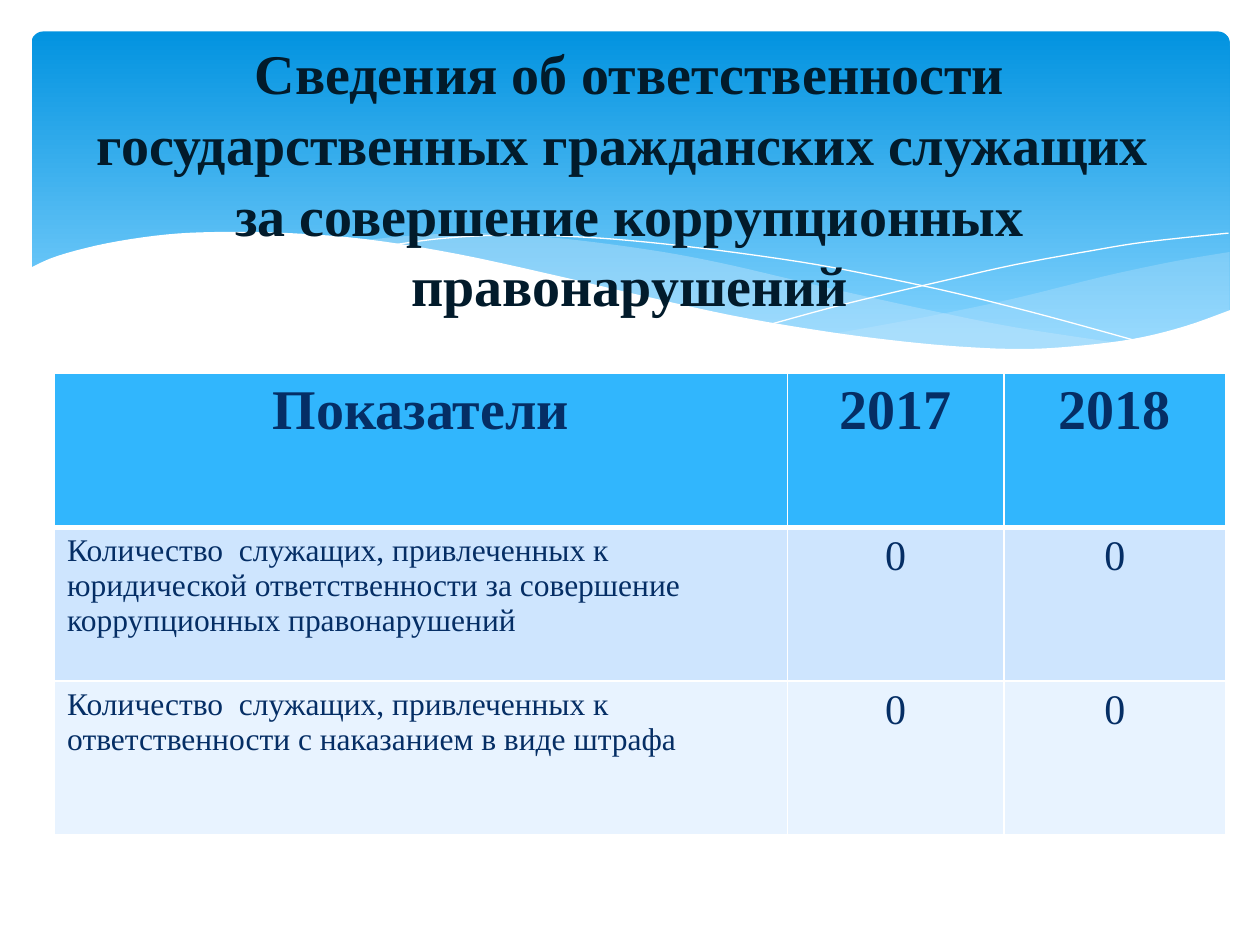
from dataclasses import dataclass
from itertools import product

from lxml import etree
from pptx import Presentation
from pptx import util as u
from pptx.dml.color import RGBColor
from pptx.enum import shapes, text
from pptx.oxml.ns import qn


@dataclass(frozen=True)
class Theme:
    font: str = "Times New Roman"
    sky_top: str = "0293E0"
    sky_bottom: str = "83D3FE"
    haze: str = "C6E7FC"
    white: str = "FFFFFF"
    title: str = "021B2B"
    ink: str = "052E65"
    header: str = "31B6FD"
    bands: tuple = ("CEE5FE", "E8F3FF")
    heading: int = 32
    value: int = 24
    body: int = 18


def smooth(knots, steps=5):
    ends = [knots[0], *knots, knots[-1]]
    points = [knots[0]]
    for a, b, c, d in zip(ends, ends[1:], ends[2:], ends[3:]):
        for i in range(1, steps + 1):
            t = i / steps
            points.append(tuple(
                0.5 * (2 * q + (r - p) * t + (2 * p - 5 * q + 4 * r - s) * t ** 2
                       + (3 * q - p - 3 * r + s) * t ** 3)
                for p, q, r, s in zip(a, b, c, d)))
    return points


class SlideBuilder:
    def __init__(self, slide, theme):
        self.s = slide
        self.theme = theme

    def label(self, p, content, size, color, bold=False, align=text.PP_ALIGN.CENTER):
        p.text = content
        p.alignment = align
        style = {"name": self.theme.font, "size": u.Pt(size), "bold": bold}
        for r in p.runs:
            for key, value in style.items():
                setattr(r.font, key, value)
            r.font.color.rgb = RGBColor.from_string(color)

    def sky(self, x, y, w, h):
        sp = self.s.shapes.add_shape(
            shapes.MSO_SHAPE.ROUNDED_RECTANGLE, *map(u.Pt, (x, y, w, h)))
        sp.adjustments[0] = 0.034
        sp.shadow.inherit = False
        sp.line.fill.background()
        sp.fill.gradient()
        sp.fill.gradient_angle = 270
        stops = ((0, self.theme.sky_top), (0.9, self.theme.sky_bottom))
        for stop, (position, color) in zip(sp.fill.gradient_stops, stops):
            stop.position = position
            stop.color.rgb = RGBColor.from_string(color)

    def outline(self, points, close):
        start, *rest = [(u.Pt(x), u.Pt(y)) for x, y in points]
        builder = self.s.shapes.build_freeform(*start)
        builder.add_line_segments(rest, close=close)
        sp = builder.convert_to_shape()
        sp.shadow.inherit = False
        return sp

    def area(self, points, color, opacity=100):
        sp = self.outline(points, True)
        sp.line.fill.background()
        sp.fill.solid()
        sp.fill.fore_color.rgb = RGBColor.from_string(color)
        if opacity < 100:
            clr = next(sp.element.spPr.iter(qn("a:srgbClr")))
            etree.SubElement(clr, qn("a:alpha"), val=str(opacity * 1000))

    def curve(self, points, color):
        sp = self.outline(points, False)
        sp.fill.background()
        sp.line.color.rgb = RGBColor.from_string(color)
        sp.line.width = u.Pt(0)

    def title(self, content, x, y, w, h):
        tf = self.s.shapes.add_textbox(*map(u.Pt, (x, y, w, h))).text_frame
        tf.word_wrap = True
        tf.vertical_anchor = text.MSO_ANCHOR.MIDDLE
        p = tf.paragraphs[0]
        self.label(p, content, self.theme.heading, self.theme.title, True)
        p.line_spacing = 1.05

    def borders(self, cell, widths):
        tc_pr = cell._tc.get_or_add_tcPr()
        for side, width in widths.items():
            ln = etree.SubElement(tc_pr, qn(f"a:ln{side}"), w=str(u.Pt(width)))
            fill = etree.SubElement(ln, qn("a:solidFill"))
            etree.SubElement(fill, qn("a:srgbClr"), val=self.theme.white)

    def table(self, rows, x, y, widths, row_height):
        th = self.theme
        frame = self.s.shapes.add_table(
            len(rows), len(widths),
            *map(u.Pt, (x, y, sum(widths), row_height * len(rows))))
        tbl = frame.table
        for column, width in zip(tbl.columns, widths):
            column.width = u.Pt(width)
        for row in tbl.rows:
            row.height = u.Pt(row_height)
        for i, j in product(range(len(rows)), range(len(widths))):
            cell = tbl.cell(i, j)
            self.borders(cell, {"L": 1, "R": 1, "T": 3 if i == 1 else 1,
                                "B": 3 if i == 0 else 1})
            cell.fill.solid()
            fill = th.bands[(i - 1) % 2] if i else th.header
            cell.fill.fore_color.rgb = RGBColor.from_string(fill)
            size = th.heading if i == 0 else th.value if j else th.body
            align = text.PP_ALIGN.LEFT if i and not j else text.PP_ALIGN.CENTER
            self.label(cell.text_frame.paragraphs[0], rows[i][j], size, th.ink, i == 0, align)


RIGHT_TOP = [(702.7, 144), (673, 149), (641.5, 155.5), (620, 160.6), (579.6, 170.6),
             (542, 178.6), (508.3, 185), (476, 190.8)]
RIGHT_BOTTOM = [(476, 190.8), (497.5, 193.7), (527, 197.3), (562.3, 199.6), (593.3, 199.6),
                (621.4, 198), (645.8, 194.4), (673.2, 188.6), (702.7, 177.8)]
MIDDLE_TOP = [(643, 196.6), (581, 187.2), (533.5, 177.8), (481, 166.3), (452.9, 159.8),
              (409.7, 149.8), (370, 142.6), (318.2, 136), (273.6, 133.2), (236.2, 134.6),
              (206, 137.5)]
MIDDLE_BOTTOM = [(206, 137.5), (246, 143.3), (291, 152), (323.3, 159.8), (381.6, 172.8),
                 (432.7, 183.6), (478.8, 191.5), (519.8, 197.3), (556.6, 199.4),
                 (589, 200.2), (617, 199.4), (643, 196.6)]
FALLING_LINE = [(222.5, 140.4), (247.7, 136.8), (278.6, 134.6), (311.8, 134.6),
                (352, 136.8), (400.3, 141.8), (458, 149.8), (500.4, 157.7),
                (547.2, 167.8), (598.3, 180.7), (653, 195.8)]
RISING_LINE = [(441.4, 185), (483.8, 173.5), (538.6, 160.6), (580.3, 151.2),
               (623.5, 143.3), (655.2, 138.2), (702, 133.2)]
WAVE = [(703.4, 177), (676.8, 186.5), (647.3, 193.7), (612, 198), (582.5, 199.4),
        (548, 198), (509.8, 194.4), (466.6, 188.6), (417, 180), (362, 167.8),
        (322, 158.4), (262.8, 145.4), (210.2, 136.8), (165.6, 133.2), (127.4, 132.5),
        (95, 134), (61.2, 139), (33, 146.2), (16.6, 153.4)]
WAVE_BASE = [(16.6, 236.9), (703.4, 236.9)]

ROWS = [
    ("Показатели", "2017", "2018"),
    ("Количество  служащих, привлеченных к юридической ответственности "
     "за совершение коррупционных правонарушений", "0", "0"),
    ("Количество  служащих, привлеченных к ответственности "
     "с наказанием в виде штрафа", "0", "0"),
]


def main():
    prs = Presentation()
    prs.slide_width, prs.slide_height = u.Pt(720), u.Pt(540)
    theme = Theme()
    b = SlideBuilder(prs.slides.add_slide(prs.slide_layouts[6]), theme)
    b.sky(18, 18, 684.7, 194.4)
    b.area(smooth(RIGHT_TOP) + smooth(RIGHT_BOTTOM), theme.haze, 29)
    b.area(smooth(MIDDLE_TOP) + smooth(MIDDLE_BOTTOM), theme.haze, 40)
    for line in (FALLING_LINE, RISING_LINE):
        b.curve(smooth(line), theme.white)
    b.area(smooth(WAVE) + WAVE_BASE, theme.white)
    b.table(ROWS, 31.2, 213.4, (418.8, 123.6, 126.9), 87.9)
    b.title("Сведения об ответственности государственных гражданских служащих \v"
            "за совершение коррупционных правонарушений", 36, 77, 648, 48)
    prs.save("out.pptx")


if __name__ == "__main__":
    main()
